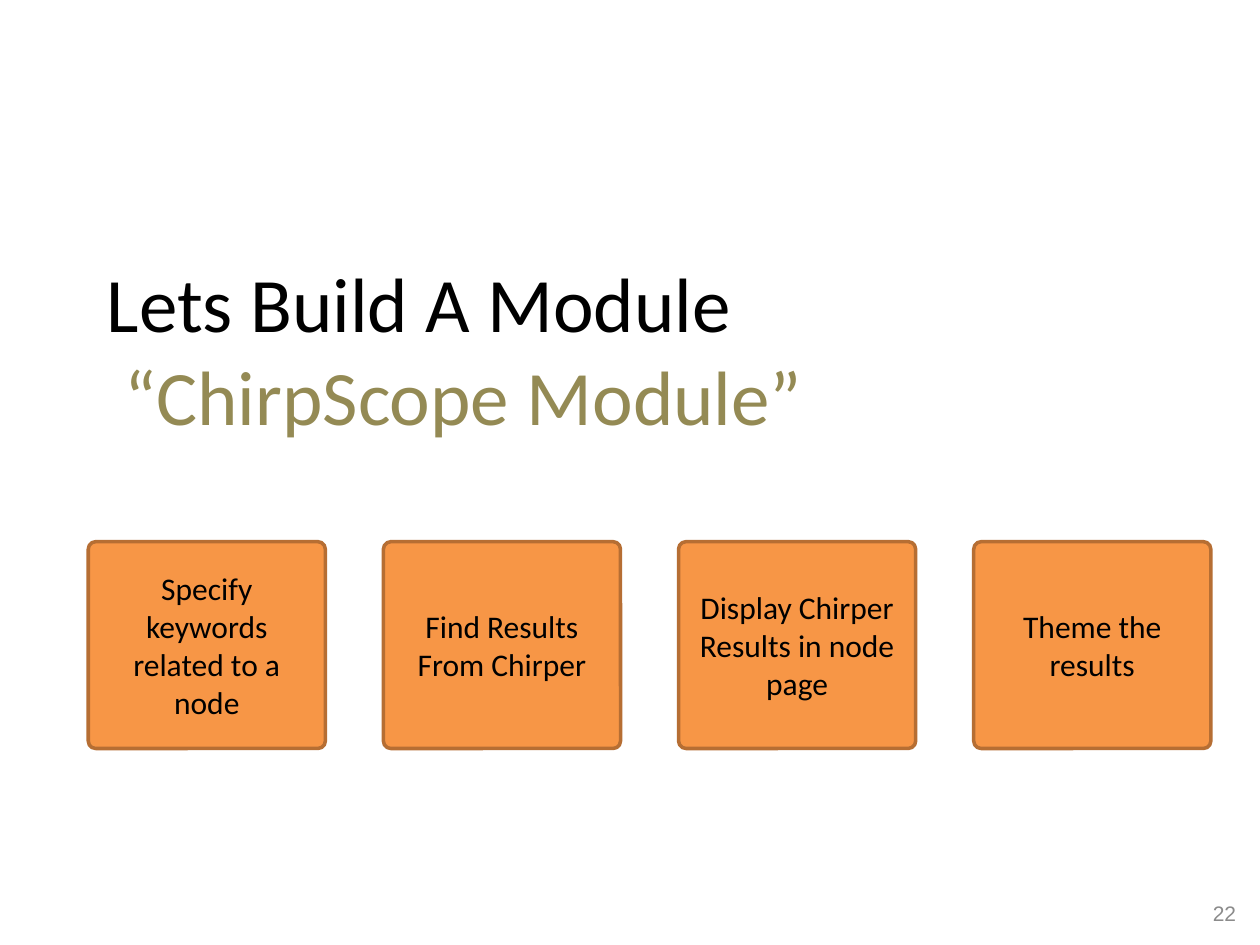
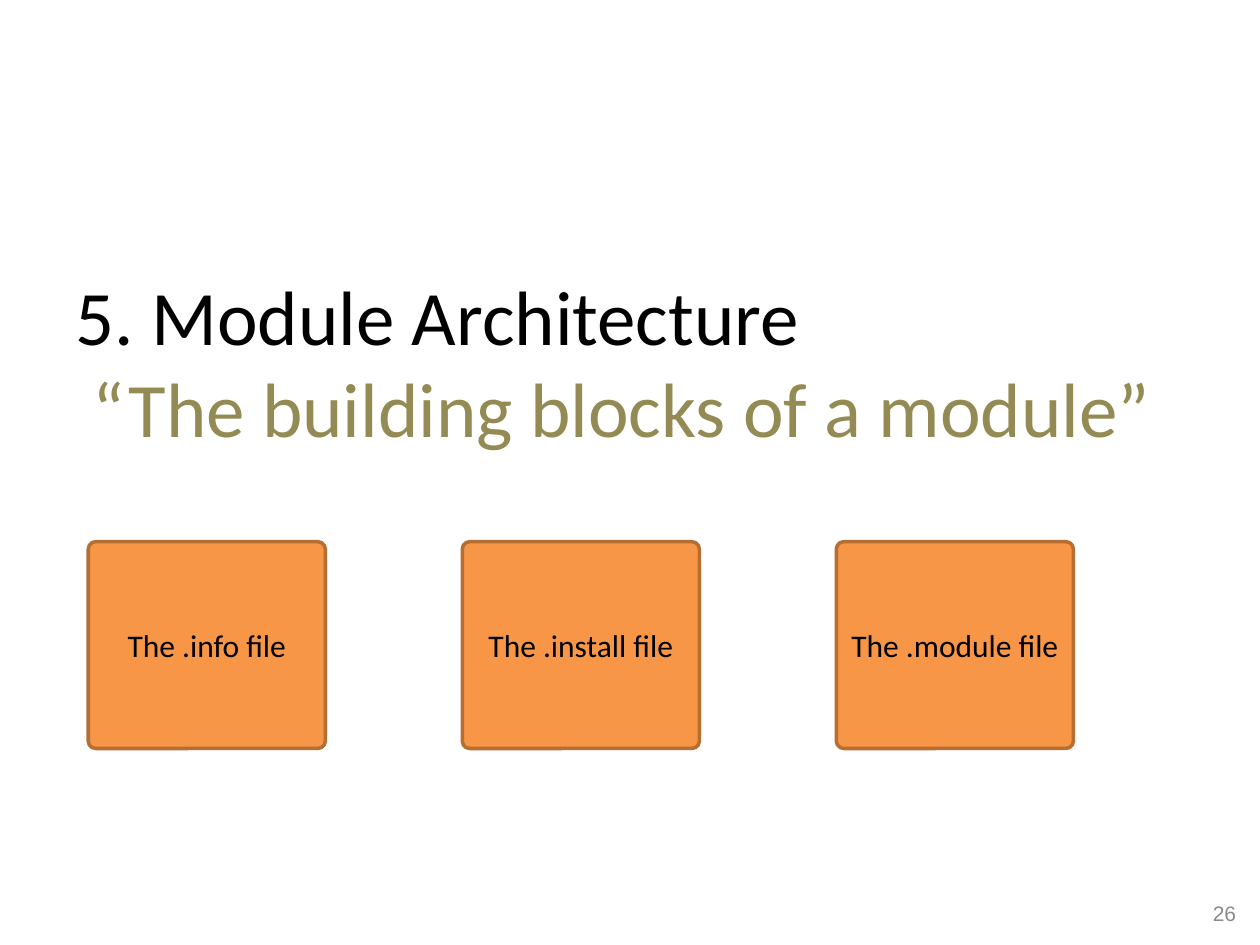
from collections import namedtuple

from pptx import Presentation
from pptx.dml.color import RGBColor
from pptx.enum.shapes import MSO_SHAPE
from pptx.enum.text import MSO_ANCHOR, MSO_AUTO_SIZE, PP_ALIGN
from pptx.util import Cm, Pt

BLACK = RGBColor(0x00, 0x00, 0x00)
OLIVE = RGBColor(0x94, 0x8A, 0x54)
ORANGE = RGBColor(0xF7, 0x96, 0x46)
BROWN = RGBColor(0xB6, 0x6E, 0x33)
GREY = RGBColor(0x8B, 0x8B, 0x8B)
HEADING_FONT = "Calibri"
NUMBER_FONT = "Arial"
TITLE_ONLY = 5

Box = namedtuple("Box", "left top width height")
NUMBER_BOX = Box(Cm(19.25), Cm(18.03), Cm(5.92), Cm(1.02))
CARD_WIDTH = Cm(4.78)
CARD_CORNER = 0.036
SUBTITLE_INDENT = Cm(0.35)


def add_run(paragraph, text, size, color, font=HEADING_FONT):
    """Append one formatted run to a paragraph."""
    run = paragraph.add_run()
    run.text = text
    run.font.name = font
    run.font.size = Pt(size)
    run.font.color.rgb = color


def place_title(slide, box, heading, quote):
    """Put the heading and its indented olive quote in the title placeholder."""
    title = slide.shapes.title
    title.left, title.top, title.width, title.height = box
    frame = title.text_frame
    frame.auto_size = MSO_AUTO_SIZE.NONE
    frame.word_wrap = True
    frame.vertical_anchor = MSO_ANCHOR.TOP
    heading_line, quote_line = frame.paragraphs[0], frame.add_paragraph()
    add_run(heading_line, heading, 44, BLACK)
    add_run(quote_line, quote, 44, OLIVE)
    for line in (heading_line, quote_line):
        line.alignment = PP_ALIGN.LEFT
    quote_line._p.get_or_add_pPr().set("marL", str(SUBTITLE_INDENT))


def add_card(slide, box, label):
    """Draw one orange rounded card with a centred label."""
    card = slide.shapes.add_shape(MSO_SHAPE.ROUNDED_RECTANGLE, *box)
    card.adjustments[0] = CARD_CORNER
    card.shadow.inherit = False
    card.fill.solid()
    card.fill.fore_color.rgb = ORANGE
    card.line.color.rgb = BROWN
    card.line.width = Pt(2)
    frame = card.text_frame
    frame.word_wrap = True
    frame.vertical_anchor = MSO_ANCHOR.MIDDLE
    label_line = frame.paragraphs[0]
    label_line.alignment = PP_ALIGN.CENTER
    add_run(label_line, label, 18, BLACK)


def add_card_row(slide, box, labels):
    """Spread equal cards evenly from the left to the right edge of the box."""
    pitch = (box.width - CARD_WIDTH) // (len(labels) - 1)
    for index, label in enumerate(labels):
        left = box.left + index * pitch
        add_card(slide, Box(left, box.top, CARD_WIDTH, box.height), label)


def add_slide_number(slide, box, number):
    """Write the page number at the right of the box."""
    frame = slide.shapes.add_textbox(*box).text_frame
    frame.word_wrap = True
    number_line = frame.paragraphs[0]
    number_line.alignment = PP_ALIGN.RIGHT
    add_run(number_line, str(number), 12, GREY, NUMBER_FONT)


def add_section_slide(deck, title_box, heading, quote, row_width, labels, number):
    """Build a section slide: title, row of cards and page number."""
    slide = deck.slides.add_slide(deck.slide_layouts[TITLE_ONLY])
    place_title(slide, title_box, heading, quote)
    add_card_row(slide, Box(Cm(1.78), Cm(10.92), row_width, Cm(4.17)), labels)
    add_slide_number(slide, NUMBER_BOX, number)


def main():
    """Build and save the deck."""
    deck = Presentation()
    deck.slide_width, deck.slide_height = Cm(25.4), Cm(19.05)
    add_section_slide(
        deck,
        Box(Cm(1.9), Cm(5.03), Cm(21.6), Cm(5.7)),
        "Lets Build A Module",
        "“ChirpScope Module”",
        Cm(22.63),
        [
            "Specify keywords related to a node",
            "Find Results From Chirper",
            "Display Chirper Results in node page",
            "Theme the results",
        ],
        22,
    )
    add_section_slide(
        deck,
        Box(Cm(1.27), Cm(5.28), Cm(22.23), Cm(7.5)),
        "5. Module Architecture",
        "“The building blocks of a module”",
        Cm(19.86),
        ["The .info file", "The .install file", "The .module file"],
        26,
    )
    deck.save("out.pptx")


if __name__ == "__main__":
    main()
